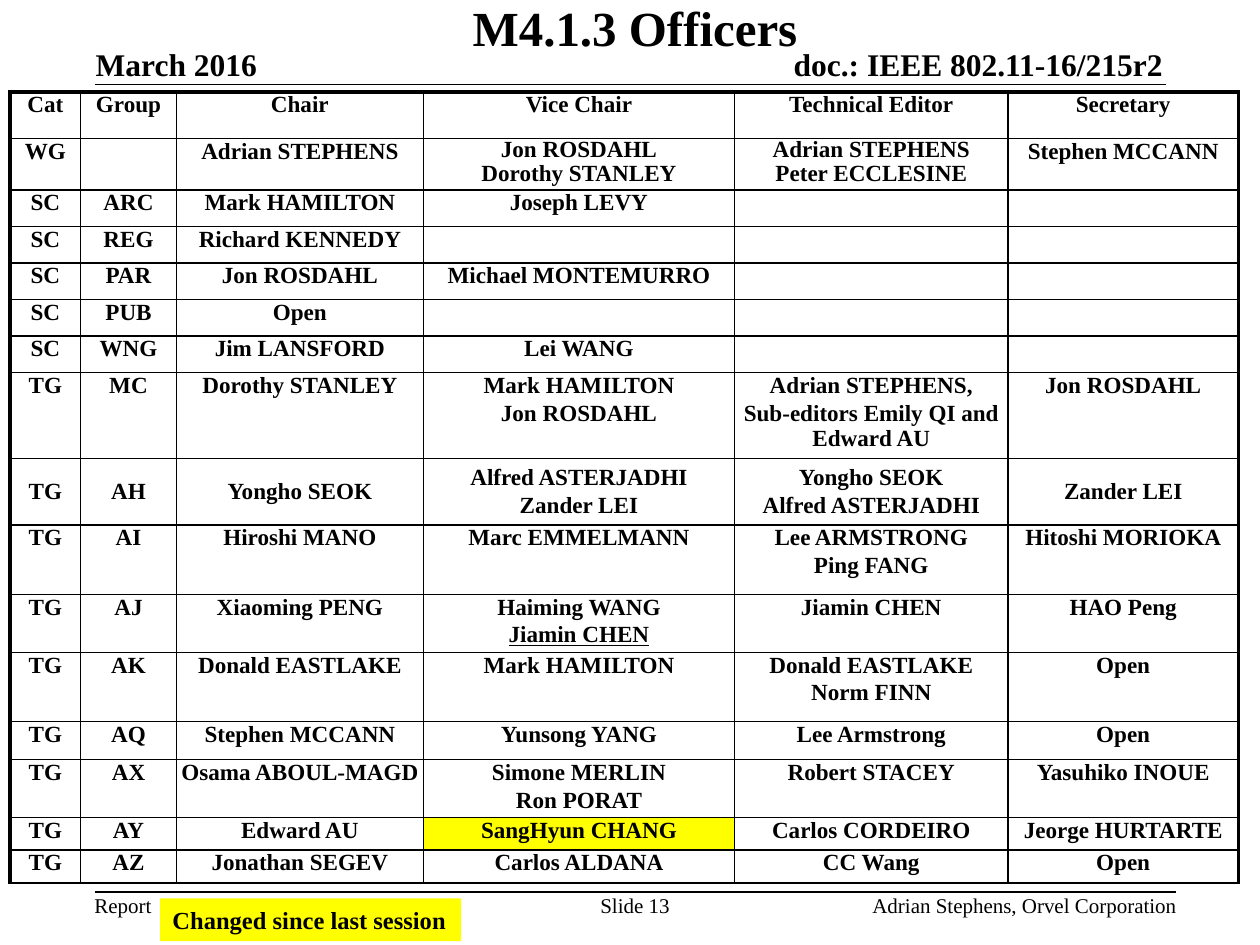
from dataclasses import dataclass

from lxml import etree
from pptx import Presentation
from pptx.dml.color import RGBColor
from pptx.enum.shapes import MSO_CONNECTOR, MSO_SHAPE
from pptx.enum.text import MSO_ANCHOR, MSO_AUTO_SIZE, PP_ALIGN
from pptx.oxml.ns import qn
from pptx.util import Inches, Pt

LEFT, CENTER, RIGHT = PP_ALIGN.LEFT, PP_ALIGN.CENTER, PP_ALIGN.RIGHT
TOP, MIDDLE, BOTTOM = MSO_ANCHOR.TOP, MSO_ANCHOR.MIDDLE, MSO_ANCHOR.BOTTOM
NO_AUTOFIT = MSO_AUTO_SIZE.NONE


@dataclass(frozen=True)
class Theme:
    font: str = "Times New Roman"
    ink: RGBColor = RGBColor(0, 0, 0)
    paper: RGBColor = RGBColor(255, 255, 255)
    changed: RGBColor = RGBColor(255, 255, 0)
    title: float = 28
    header: float = 18
    note: float = 14
    cell: float = 13.2
    footer: float = 12
    thin: float = 1
    thick: float = 2.25


theme = Theme()


def style_text(frame, size, bold, align):
    for paragraph in frame.paragraphs:
        paragraph.alignment = align
        for run in paragraph.runs:
            run.font.name = theme.font
            run.font.size = Pt(size)
            run.font.bold = bold
            run.font.color.rgb = theme.ink


def add_border(cell, side, width):
    line = etree.SubElement(cell._tc.get_or_add_tcPr(), qn(f"a:ln{side}"), w=str(Pt(width)))
    fill = etree.SubElement(line, qn("a:solidFill"))
    etree.SubElement(fill, qn("a:srgbClr"), val=str(theme.ink))


prs = Presentation()
prs.slide_width, prs.slide_height = Inches(10), Inches(7.5)
slide = prs.slides.add_slide(prs.slide_layouts[5])

# Header and footer rules
for y, x_end in [(0.67, 9.25), (7.08, 9.33)]:
    rule = slide.shapes.add_connector(
        MSO_CONNECTOR.STRAIGHT, Inches(0.75), Inches(y), Inches(x_end), Inches(y))
    rule.line.color.rgb = theme.ink
    rule.line.width = Pt(theme.thin)
    etree.SubElement(rule._element.spPr, qn("a:effectLst"))

# Title
title = slide.shapes.title
title.left, title.top = Inches(1.08), Inches(0)
title.width, title.height = Inches(7.92), Inches(0.42)
title.text_frame.text = "M4.1.3 Officers"
title.text_frame.auto_size = NO_AUTOFIT
title.text_frame.vertical_anchor = MIDDLE
style_text(title.text_frame, theme.title, True, CENTER)

# Header and footer texts: wording, left, top, width, height, size, bold, alignment, anchor
margin_texts = [
    ("March 2016", 0.76, 0.36, 1.6, 0.3, theme.header, True, LEFT, BOTTOM),
    ("doc.: IEEE 802.11-16/215r2", 5.77, 0.36, 3.46, 0.3, theme.header, True, RIGHT, BOTTOM),
    ("Report", 0.75, 7.08, 0.5, 0.2, theme.footer, False, LEFT, TOP),
    ("Slide 13", 4.64, 7.08, 0.8, 0.2, theme.footer, False, CENTER, TOP),
    ("Adrian Stephens, Orvel Corporation", 6.34, 7.08, 3, 0.2,
     theme.footer, False, RIGHT, TOP),
]
for wording, x, y, w, h, size, bold, align, anchor in margin_texts:
    margin_frame = slide.shapes.add_textbox(
        Inches(x), Inches(y), Inches(w), Inches(h)).text_frame
    margin_frame.text = wording
    margin_frame.word_wrap = True
    margin_frame.auto_size = NO_AUTOFIT
    margin_frame.vertical_anchor = anchor
    margin_frame.margin_left = margin_frame.margin_right = 0
    margin_frame.margin_top = margin_frame.margin_bottom = 0
    style_text(margin_frame, size, bold, align)

# Officers: row height, then one entry per column; a line break starts a new paragraph
officers = [
    (0.37, "Cat", "Group", "Chair", "Vice Chair", "Technical Editor", "Secretary"),
    (0.41, "WG", "", "Adrian STEPHENS", "Jon ROSDAHL\nDorothy STANLEY",
     "Adrian STEPHENS\nPeter ECCLESINE", "Stephen MCCANN"),
    (0.29, "SC", "ARC", "Mark HAMILTON", "Joseph LEVY", "", ""),
    (0.29, "SC", "REG", "Richard KENNEDY", "", "", ""),
    (0.29, "SC", "PAR", "Jon ROSDAHL", "Michael MONTEMURRO", "", ""),
    (0.29, "SC", "PUB", "Open", "", "", ""),
    (0.29, "SC", "WNG", "Jim LANSFORD", "Lei WANG", "", ""),
    (0.68, "TG", "MC", "Dorothy STANLEY", "Mark HAMILTON\nJon ROSDAHL",
     "Adrian STEPHENS,\nSub-editors Emily QI and Edward AU", "Jon ROSDAHL"),
    (0.53, "TG", "AH", "Yongho SEOK", "Alfred ASTERJADHI\nZander LEI",
     "Yongho SEOK\nAlfred ASTERJADHI", "Zander LEI"),
    (0.55, "TG", "AI", "Hiroshi MANO", "Marc EMMELMANN",
     "Lee ARMSTRONG\nPing FANG", "Hitoshi MORIOKA"),
    (0.46, "TG", "AJ", "Xiaoming PENG", "Haiming WANG\nJiamin CHEN",
     "Jiamin CHEN", "HAO Peng"),
    (0.55, "TG", "AK", "Donald EASTLAKE", "Mark HAMILTON",
     "Donald EASTLAKE\nNorm FINN", "Open"),
    (0.3, "TG", "AQ", "Stephen MCCANN", "Yunsong YANG", "Lee Armstrong", "Open"),
    (0.46, "TG", "AX", "Osama ABOUL-MAGD", "Simone MERLIN\nRon PORAT",
     "Robert STACEY", "Yasuhiko INOUE"),
    (0.26, "TG", "AY", "Edward AU", "SangHyun CHANG", "Carlos CORDEIRO", "Jeorge HURTARTE"),
    (0.26, "TG", "AZ", "Jonathan SEGEV", "Carlos ALDANA", "CC Wang", "Open"),
]
column_widths = [0.56, 0.76, 1.96, 2.47, 2.17, 1.83]
last_column = len(column_widths) - 1
officer_table = slide.shapes.add_table(
    len(officers), len(column_widths), Inches(0.08), Inches(0.73),
    Inches(sum(column_widths)), Inches(sum(row[0] for row in officers))).table
officer_table.first_row = officer_table.horz_banding = False
for column, width in zip(officer_table.columns, column_widths):
    column.width = Inches(width)

for r, (height, *entries) in enumerate(officers):
    officer_table.rows[r].height = Inches(height)
    category, group = entries[:2]
    for c, entry in enumerate(entries):
        cell = officer_table.cell(r, c)
        cell.margin_left = cell.margin_right = cell.margin_top = cell.margin_bottom = 0
        cell.vertical_anchor = MIDDLE if group == "AH" else TOP
        cell.text_frame.text = entry
        style_text(cell.text_frame, theme.cell, True, CENTER)
        names = cell.text_frame.paragraphs
        if not entry:  # keeps an empty cell from stretching its row
            etree.SubElement(names[0]._p, qn("a:endParaRPr"), sz=str(round(theme.cell * 100)))
        for later_name in names[1:]:
            later_name.space_before = Pt(0.7 if category == "WG" else 1.3)
        if category == "WG" and len(names) > 1:
            for name in names:
                name.line_spacing = 0.9
        if group == "AJ" and c == 3:
            names[1].runs[0].font.underline = True
        for side, is_outer in [("L", c == 0), ("R", c == last_column),
                               ("T", r == 0), ("B", False)]:
            add_border(cell, side, theme.thick if is_outer else theme.thin)
        cell.fill.solid()
        cell.fill.fore_color.rgb = theme.changed if entry == "SangHyun CHANG" else theme.paper

# Key to the highlight
change_key = slide.shapes.add_shape(
    MSO_SHAPE.RECTANGLE, Inches(1.27), Inches(7.13), Inches(2.39), Inches(0.34))
change_key.shadow.inherit = False
change_key.fill.solid()
change_key.fill.fore_color.rgb = theme.changed
change_key.line.fill.background()
change_key.text_frame.text = "Changed since last session"
change_key.text_frame.word_wrap = False
change_key.text_frame.vertical_anchor = TOP
style_text(change_key.text_frame, theme.note, True, LEFT)

prs.save("out.pptx")
